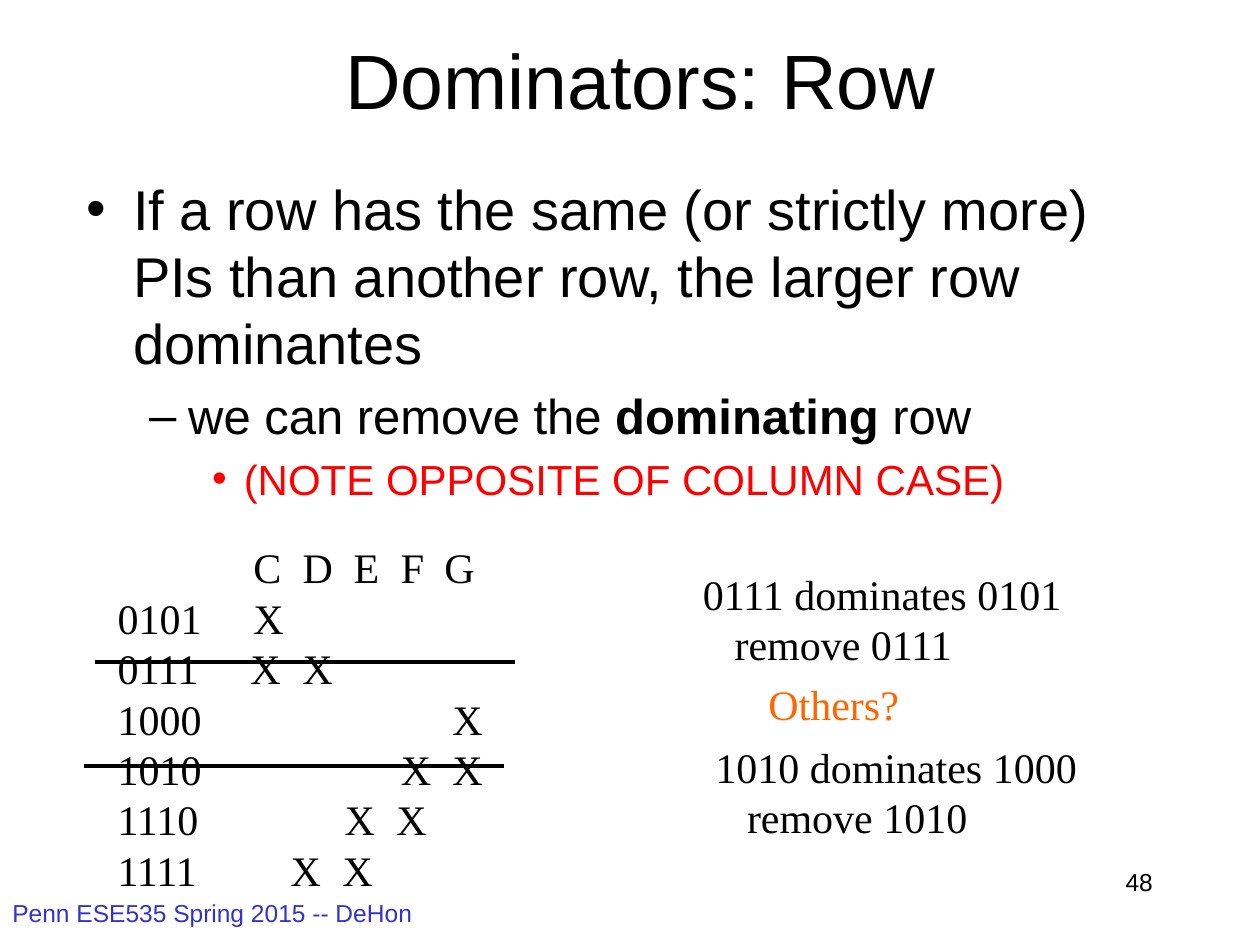
from lxml.etree import SubElement
from pptx import Presentation
from pptx.dml.color import RGBColor
from pptx.enum.shapes import MSO_CONNECTOR
from pptx.enum.text import MSO_ANCHOR, MSO_AUTO_SIZE, PP_ALIGN
from pptx.oxml.ns import qn
from pptx.util import Cm, Pt

BLACK = RGBColor(0x00, 0x00, 0x00)
RED = RGBColor(0xFF, 0x00, 0x00)
ORANGE = RGBColor(0xFF, 0x66, 0x00)
BLUE = RGBColor(0x33, 0x33, 0xCC)
SANS, SERIF = "Arial", "Times New Roman"

# Each level: bullet, left margin, hanging indent, text size, colour
LEVELS = [
    ("•", 0.95, 0.95, 32, BLACK),
    ("–", 2.06, 0.79, 28, BLACK),
    ("•", 3.18, 0.64, 24, RED),
]
POINTS = [
    [("If a row has the same (or strictly more) PIs than another row, "
      "the larger row dominantes", False)],
    [("we can remove the ", False), ("dominating", True), (" row", False)],
    [("(NOTE OPPOSITE OF COLUMN CASE)", False)],
]
# Each row: label, mark, positions of the marks in cm
COVER = [
    ("", "CDEFG", [2.74, 3.73, 4.76, 5.71, 6.59]),
    ("0101", "X", [2.74]),
    ("0111", "XX", [2.68, 3.73]),
    ("1000", "X", [6.75]),
    ("1010", "XX", [5.71, 6.75]),
    ("1110", "XX", [4.58, 5.62]),
    ("1111", "XX", [3.49, 4.54]),
]


def add_run(para, text, size, font=SANS, color=BLACK, bold=False):
    run = para.add_run()
    run.text = text
    run.font.size = Pt(size)
    run.font.name = font
    run.font.bold = bold
    run.font.color.rgb = color


def place(shape, left, top, width, height):
    shape.left, shape.top = Cm(left), Cm(top)
    shape.width, shape.height = Cm(width), Cm(height)


def next_para(frame, index):
    return frame.add_paragraph() if index else frame.paragraphs[0]


def set_bullet(para, mark, left, hang):
    props = para._p.get_or_add_pPr()
    props.set("marL", str(Cm(left)))
    props.set("indent", str(-Cm(hang)))
    SubElement(props, qn("a:buChar"), char=mark)


def set_tabs(para, stops):
    tabs = SubElement(para._p.get_or_add_pPr(), qn("a:tabLst"))
    for stop in stops:
        SubElement(tabs, qn("a:tab"), pos=str(Cm(stop)), algn="l")


def add_box(slide, left, top, width, height):
    box = slide.shapes.add_textbox(Cm(left), Cm(top), Cm(width), Cm(height))
    box.text_frame.word_wrap = True
    return box.text_frame


def add_label(slide, area, text, size, font, color, align=PP_ALIGN.LEFT):
    para = add_box(slide, *area).paragraphs[0]
    para.alignment = align
    add_run(para, text, size, font, color)


def add_title(slide, text):
    title = slide.shapes.title
    place(title, 2.12, 0, 21.59, 3.18)
    title.text_frame.vertical_anchor = MSO_ANCHOR.MIDDLE
    para = title.text_frame.paragraphs[0]
    para.alignment = PP_ALIGN.CENTER
    add_run(para, text, 44)


def add_points(slide):
    body = slide.placeholders[1]
    place(body, 1.48, 3.39, 21.59, 11.43)
    frame = body.text_frame
    frame.auto_size = MSO_AUTO_SIZE.NONE
    for level, (runs, style) in enumerate(zip(POINTS, LEVELS)):
        mark, left, hang, size, color = style
        para = next_para(frame, level)
        para.level = level
        set_bullet(para, mark, left, hang)
        para.space_before = Pt(0.2 * size if level else 0)
        for text, bold in runs:
            add_run(para, text, size, color=color, bold=bold)


def add_cover(slide):
    frame = add_box(slide, 2.12, 10.8, 8.15, 7.37)
    for index, (label, marks, stops) in enumerate(COVER):
        para = next_para(frame, index)
        set_tabs(para, stops)
        add_run(para, "\t".join([label, *marks]), 24, SERIF)


def add_claim(slide, left, top, claim, action):
    frame = add_box(slide, left, top, 7.8, 2.29)
    for index, text in enumerate((claim, action)):
        para = next_para(frame, index)
        if index:
            para._p.get_or_add_pPr().set("marL", str(Cm(0.64)))
        add_run(para, text, 24, SERIF)


def add_strike(slide, left, top):
    line = slide.shapes.add_connector(
        MSO_CONNECTOR.STRAIGHT, Cm(left), Cm(top), Cm(left + 8.47), Cm(top))
    line.line.color.rgb = BLACK
    line.line.width = Pt(2.25)
    SubElement(line._element.spPr, qn("a:effectLst"))


def main():
    deck = Presentation()
    deck.slide_width, deck.slide_height = Cm(25.4), Cm(19.05)
    slide = deck.slides.add_slide(deck.slide_layouts[1])
    add_label(slide, (0, 17.98, 9.73, 1.07),
              "Penn ESE535 Spring 2015 -- DeHon", 14, SANS, BLUE)
    add_label(slide, (18.21, 17.35, 5.28, 1.27), "48", 14, SANS, BLACK,
              PP_ALIGN.RIGHT)
    add_title(slide, "Dominators: Row")
    add_points(slide)
    add_cover(slide)
    add_claim(slide, 13.92, 11.33, "0111 dominates 0101", "remove 0111")
    add_claim(slide, 14.17, 14.82, "1010 dominates 1000", "remove 1010")
    add_strike(slide, 1.91, 13.34)
    add_strike(slide, 1.69, 15.45)
    add_label(slide, (15.24, 13.55, 3.18, 1.27), "Others?", 24, SERIF, ORANGE)
    deck.save("out.pptx")


if __name__ == "__main__":
    main()
